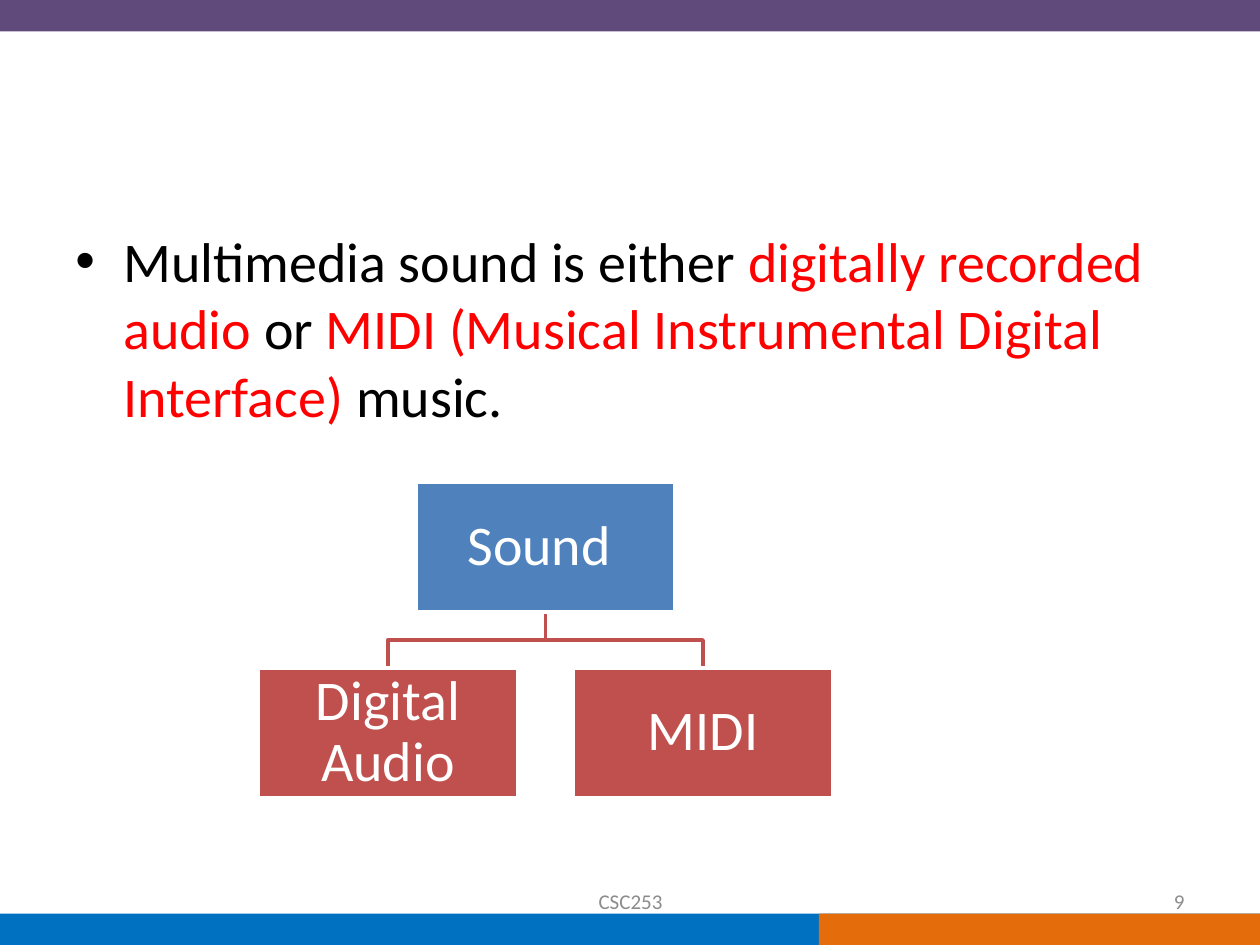
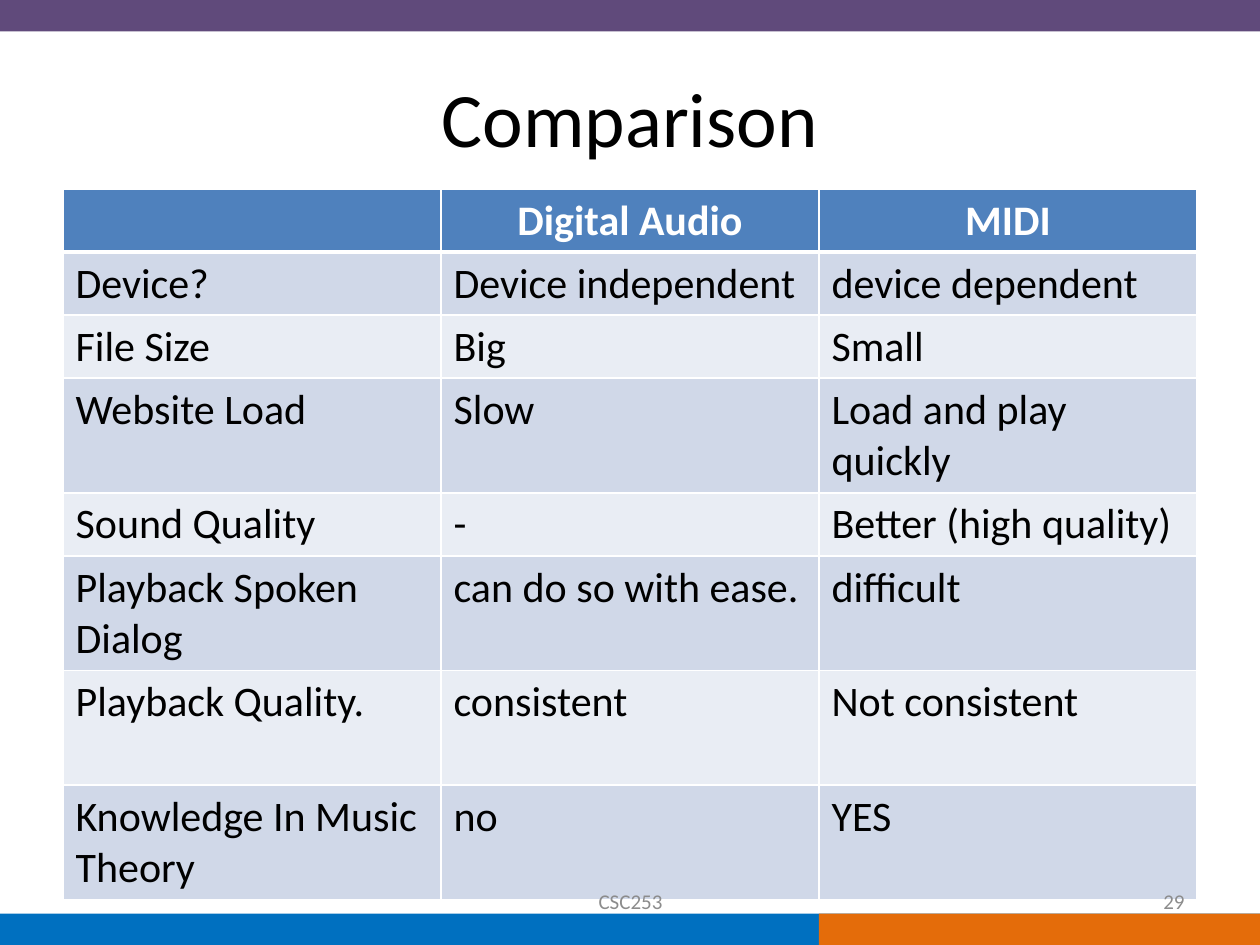
from lxml import etree
from pptx import Presentation, util as u
from pptx.dml.color import RGBColor
from pptx.enum import shapes, text
from pptx.oxml import ns


class Theme:
    font = "Calibri"
    purple, blue, orange = "604A7B", "0070C0", "E46C0A"
    black, white, red, grey = "000000", "FFFFFF", "FF0000", "8C8C8C"
    root, branch = "4F81BD", "C0504D"
    row_bands = "E9EDF4", "D0D8E8"
    title_size, body_size, table_size, footer_size = 44, 32, 24, 12


PX_PER_INCH = 100
LEFT, CENTER, RIGHT = text.PP_ALIGN.LEFT, text.PP_ALIGN.CENTER, text.PP_ALIGN.RIGHT
MIDDLE = text.MSO_ANCHOR.MIDDLE


def px(*lengths):
    """Turn lengths in px into EMU."""
    return [u.Emu(length * 914400 // PX_PER_INCH) for length in lengths]


def write(frame, parts, size, align=LEFT, bold=False):
    """Fill the first paragraph with (wording, colour) parts."""
    frame.word_wrap = True
    para = frame.paragraphs[0]
    para.alignment = align
    for wording, color in parts:
        span = para.add_run()
        span.text = wording
        span.font.name = Theme.font
        span.font.size = u.Pt(size)
        span.font.bold = bold
        span.font.color.rgb = RGBColor.from_string(color)
    return para


deck = Presentation()
deck.slide_width, deck.slide_height = px(1000, 750)

# Shared bands
bands = [
    (0, 0, 1000, Theme.purple),
    (-8, 725, 1008, Theme.blue),
    (650, 725, 350, Theme.orange),
]
pages = [deck.slides.add_slide(deck.slide_layouts[6]) for _ in range(2)]
for page in pages:
    for left, top, width, color in bands:
        band = page.shapes.add_shape(
            shapes.MSO_SHAPE.RECTANGLE, *px(left, top, width, 25))
        band.shadow.inherit = False
        band.fill.solid()
        band.fill.fore_color.rgb = RGBColor.from_string(color)
        band.line.fill.background()
sound_page, comparison_page = pages

# Kinds of multimedia sound
box = sound_page.shapes.add_textbox(*px(50, 175, 900, 495))
para = write(box.text_frame, [
    ("Multimedia sound is either ", Theme.black),
    ("digitally recorded audio ", Theme.red),
    ("or ", Theme.black),
    ("MIDI (Musical Instrumental Digital Interface) ", Theme.red),
    ("music.", Theme.black),
], Theme.body_size)
properties = para._p.get_or_add_pPr()
indent = px(38)[0]
properties.set("marL", str(indent))
properties.set("indent", str(-indent))
etree.SubElement(properties, ns.qn("a:buFont"), typeface="Arial")
etree.SubElement(properties, ns.qn("a:buChar"), char="•")

# Sound tree
node_width, node_height = 206, 103
root_center, root_top, branch_top, spread = 433, 383, 530, 125
root_bottom = root_top + node_height
elbow = (root_bottom + branch_top) // 2
for branch_center in (root_center + spread, root_center - spread):
    builder = sound_page.shapes.build_freeform(*px(root_center, root_bottom))
    builder.add_line_segments(
        [px(root_center, elbow), px(branch_center, elbow),
         px(branch_center, branch_top)], close=False)
    link = builder.convert_to_shape()
    link.shadow.inherit = False
    link.fill.background()
    link.line.color.rgb = RGBColor.from_string(Theme.branch)
    link.line.width = u.Pt(2)

nodes = [
    ("Sound ", root_center, root_top, Theme.root),
    ("Digital Audio", root_center - spread, branch_top, Theme.branch),
    ("MIDI", root_center + spread, branch_top, Theme.branch),
]
for label, center, top, color in nodes:
    node = sound_page.shapes.add_shape(
        shapes.MSO_SHAPE.RECTANGLE,
        *px(center - node_width // 2, top, node_width, node_height))
    node.shadow.inherit = False
    node.fill.solid()
    node.fill.fore_color.rgb = RGBColor.from_string(color)
    node.line.color.rgb = RGBColor.from_string(Theme.white)
    node.line.width = u.Pt(2)
    frame = node.text_frame
    frame.margin_left, frame.margin_top, frame.margin_right, frame.margin_bottom = px(2, 2, 2, 2)
    frame.vertical_anchor = MIDDLE
    para = write(frame, [(label, Theme.white)], Theme.body_size, CENTER)
    para.line_spacing = 0.9

# Comparison table
title = comparison_page.shapes.add_textbox(*px(50, 30, 900, 125))
title.text_frame.vertical_anchor = MIDDLE
write(title.text_frame, [("Comparison", Theme.black)], Theme.title_size, CENTER)

one_line, two_lines = 50, 91
rows = [
    (one_line, "", "Digital Audio", "MIDI"),
    (one_line, "Device?", "Device independent", "device dependent"),
    (one_line, "File Size", "Big", "Small"),
    (two_lines, "Website Load", "Slow", "Load and play quickly"),
    (one_line, "Sound Quality", "-", "Better (high quality)"),
    (two_lines, "Playback Spoken Dialog", "can do so with ease.", "difficult"),
    (two_lines, "Playback Quality.", "consistent", "Not consistent"),
    (two_lines, "Knowledge In Music Theory", "no", "YES"),
]
table_height = sum(row[0] for row in rows)
table = comparison_page.shapes.add_table(
    len(rows), 3, *px(50, 150, 900, table_height)).table
for row_index, (height, *wordings) in enumerate(rows):
    table.rows[row_index].height = px(height)[0]
    header = row_index == 0
    fill = Theme.root if header else Theme.row_bands[row_index % 2]
    color = Theme.white if header else Theme.black
    border_points = {
        "L": 1, "R": 1,
        "T": 3 if row_index == 1 else 1,
        "B": 3 if header else 1,
    }
    for column_index, wording in enumerate(wordings):
        cell = table.cell(row_index, column_index)
        cell.fill.solid()
        cell.fill.fore_color.rgb = RGBColor.from_string(fill)
        if wording:
            write(cell.text_frame, [(wording, color)], Theme.table_size,
                  CENTER if header else LEFT, header)
        cell_properties = cell._tc.get_or_add_tcPr()
        for position, (side, points) in enumerate(border_points.items()):
            border = etree.Element(ns.qn(f"a:ln{side}"), w=str(u.Pt(points)))
            border_fill = etree.SubElement(border, ns.qn("a:solidFill"))
            etree.SubElement(border_fill, ns.qn("a:srgbClr"), val=Theme.white)
            cell_properties.insert(position, border)

# Shared footers
for page, number in zip(pages, ("9", "29")):
    footers = [(342, 317, "CSC253", CENTER), (717, 233, number, RIGHT)]
    for left, width, wording, align in footers:
        footer = page.shapes.add_textbox(*px(left, 695, width, 40))
        footer.text_frame.vertical_anchor = MIDDLE
        write(footer.text_frame, [(wording, Theme.grey)], Theme.footer_size, align)

deck.save("out.pptx")
